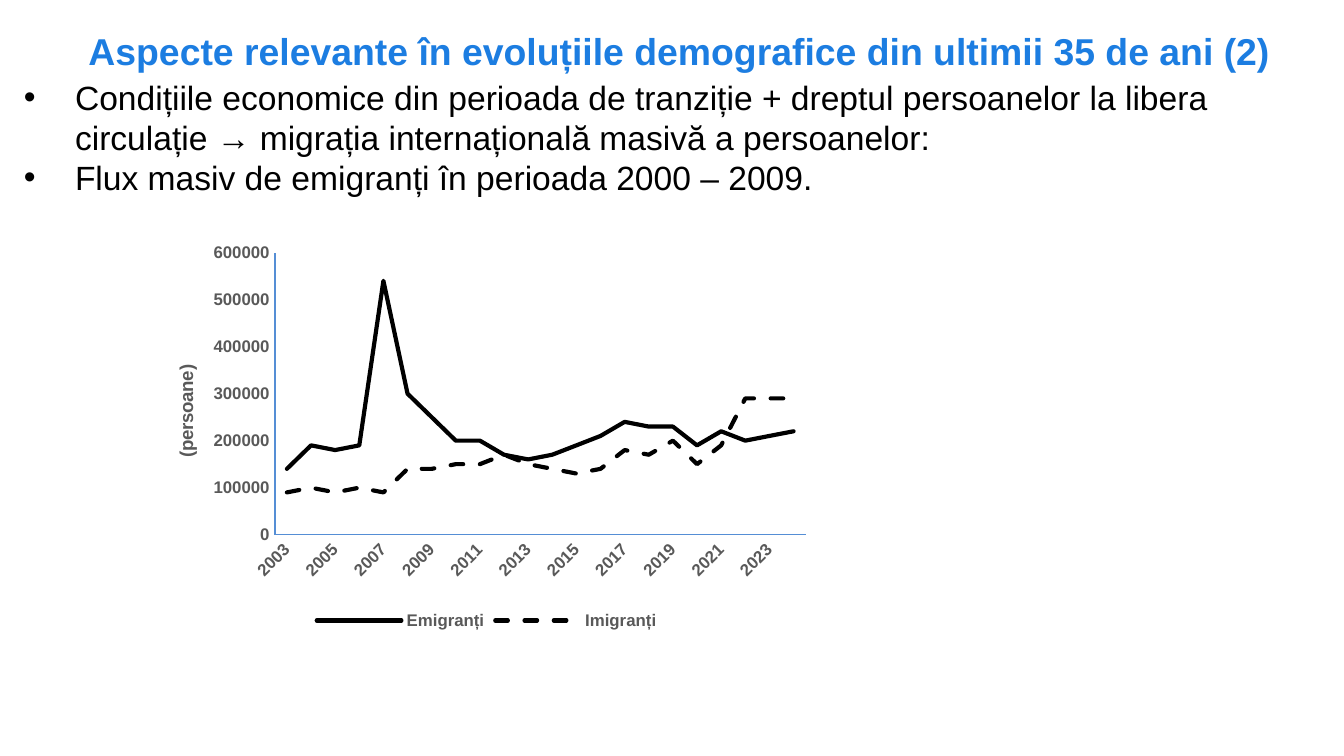
import dataclasses

import lxml.etree
import pptx
import pptx.chart.data
import pptx.dml.color
import pptx.enum.chart
import pptx.enum.dml
import pptx.enum.text
import pptx.oxml
import pptx.oxml.ns
import pptx.util

Inches = pptx.util.Inches
Pt = pptx.util.Pt
qn = pptx.oxml.ns.qn


@dataclasses.dataclass(frozen=True)
class Theme:
    font: str = "Arial"
    title_color: str = "1C7DE1"
    text_color: str = "000000"
    label_color: str = "595959"
    axis_color: str = "558ED5"
    title_size: float = 20
    body_size: float = 18
    axis_title_size: float = 10
    label_size: float = 9
    axis_width: float = 0.75
    series_width: float = 2.25


THEME = Theme()

TITLE = "Aspecte relevante în evoluțiile demografice din ultimii 35 de ani (2)"
BULLETS = [
    "Condițiile economice din perioada de tranziție + dreptul persoanelor la libera "
    "circulație → migrația internațională masivă a persoanelor:",
    "Flux masiv de emigranți în perioada 2000 – 2009.",
]

# Migration flows, in thousands of persons
YEARS = range(2003, 2025)
EMIGRANTS = [140, 190, 180, 190, 540, 300, 250, 200, 200, 170, 160,
             170, 190, 210, 240, 230, 230, 190, 220, 200, 210, 220]
IMMIGRANTS = [90, 100, 90, 100, 90, 140, 140, 150, 150, 170, 150,
              140, 130, 140, 180, 170, 200, 150, 190, 290, 290, 290]


def rgb(color):
    return pptx.dml.color.RGBColor.from_string(color)


def style_font(font, size, color, bold=False):
    font.name = THEME.font
    font.size = Pt(size)
    font.bold = bold
    font.color.rgb = rgb(color)


def style_line(line, color, width):
    line.color.rgb = rgb(color)
    line.width = Pt(width)


def add_text_frame(s, left, top, width, height):
    tf = s.shapes.add_textbox(Inches(left), Inches(top),
                              Inches(width), Inches(height)).text_frame
    tf.word_wrap = True
    return tf


def add_run(p, text, size, color, bold=False):
    r = p.add_run()
    r.text = text
    style_font(r.font, size, color, bold)


def add_title(s):
    tf = add_text_frame(s, 0.56, 0, 9.44, 0.76)
    tf.vertical_anchor = pptx.enum.text.MSO_ANCHOR.MIDDLE
    add_run(tf.paragraphs[0], TITLE, THEME.title_size, THEME.title_color, True)


def add_bullets(s):
    tf = add_text_frame(s, 0.08, 0.52, 9.51, 1.01)
    tf.auto_size = pptx.enum.text.MSO_AUTO_SIZE.SHAPE_TO_FIT_TEXT
    indent = Inches(0.38)
    for i, text in enumerate(BULLETS):
        p = tf.add_paragraph() if i else tf.paragraphs[0]
        p_pr = p._p.get_or_add_pPr()
        p_pr.set("marL", str(indent))
        p_pr.set("indent", str(-indent))
        lxml.etree.SubElement(p_pr, qn("a:buFont"), typeface=THEME.font)
        lxml.etree.SubElement(p_pr, qn("a:buChar"), char="•")
        add_run(p, text, THEME.body_size, THEME.text_color)


def make_layout(**values):
    layout = pptx.oxml.parse_xml(
        f'<c:layout {pptx.oxml.ns.nsdecls("c")}><c:manualLayout/></c:layout>')
    for tag, value in values.items():
        lxml.etree.SubElement(layout[0], qn(f"c:{tag}"), val=str(value))
    return layout


def place_part(parent, index, layout):
    for old in parent.findall(qn("c:layout")):
        parent.remove(old)
    parent.insert(index, layout)


def style_axis(axis):
    axis.has_major_gridlines = False
    axis.major_tick_mark = pptx.enum.chart.XL_TICK_MARK.NONE
    axis.minor_tick_mark = pptx.enum.chart.XL_TICK_MARK.NONE
    style_font(axis.tick_labels.font, THEME.label_size, THEME.label_color, True)
    style_line(axis.format.line, THEME.axis_color, THEME.axis_width)


def style_category_axis(axis):
    style_axis(axis)
    # Slanted labels, every second year
    axis._element.find(qn("c:txPr")).find(qn("a:bodyPr")).set("rot", "-2700000")
    skip = lxml.etree.Element(qn("c:tickLblSkip"), val="2")
    axis._element.find(qn("c:noMultiLvlLbl")).addprevious(skip)


def style_value_axis(axis):
    style_axis(axis)
    axis.minimum_scale = 0
    axis.maximum_scale = 600000
    axis.major_unit = 100000
    axis.tick_labels.number_format = "0"
    axis.tick_labels.number_format_is_linked = False
    tf = axis.axis_title.text_frame
    add_run(tf.paragraphs[0], "(persoane)", THEME.axis_title_size,
            THEME.label_color, True)
    body_pr = tf._txBody.find(qn("a:bodyPr"))
    body_pr.set("rot", "-5400000")
    body_pr.set("vert", "horz")
    place_part(axis.axis_title._element, 1,
               make_layout(xMode="edge", yMode="edge", x=0.03, y=0.32))


def add_migration_chart(s):
    data = pptx.chart.data.CategoryChartData(number_format="0")
    data.categories = [str(year) for year in YEARS]
    for name, thousands in (("Emigranți", EMIGRANTS), ("Imigranți", IMMIGRANTS)):
        data.add_series(name, [1000 * n for n in thousands])
    chart = s.shapes.add_chart(
        pptx.enum.chart.XL_CHART_TYPE.LINE, Inches(1.12), Inches(1.73),
        Inches(5), Inches(3), data).chart
    chart.has_title = False
    style_font(chart.font, THEME.axis_title_size, THEME.text_color)
    chart.plots[0].vary_by_categories = False

    # Series: solid for leaving, dashed for arriving
    for series in chart.series:
        series.smooth = False
        series.marker.style = pptx.enum.chart.XL_MARKER_STYLE.NONE
        style_line(series.format.line, THEME.text_color, THEME.series_width)
        series.format.line._ln.set("cap", "rnd")
    chart.series[1].format.line.dash_style = pptx.enum.dml.MSO_LINE.DASH

    # Axes, legend and plot area
    style_category_axis(chart.category_axis)
    style_value_axis(chart.value_axis)
    chart.has_legend = True
    chart.legend.position = pptx.enum.chart.XL_LEGEND_POSITION.BOTTOM
    chart.legend.include_in_layout = False
    style_font(chart.legend.font, THEME.label_size, THEME.label_color, True)
    place_part(chart._chartSpace.chart.plotArea, 0,
               make_layout(layoutTarget="inner", xMode="edge", yMode="edge",
                           x=0.185, y=0.05, w=0.79, h=0.7))


def main():
    prs = pptx.Presentation()
    # Widescreen, 16 to 9
    prs.slide_width = Inches(10)
    prs.slide_height = Inches(10 * 9 / 16)
    s = prs.slides.add_slide(prs.slide_layouts[6])
    add_title(s)
    add_bullets(s)
    add_migration_chart(s)
    prs.save("out.pptx")


if __name__ == "__main__":
    main()
